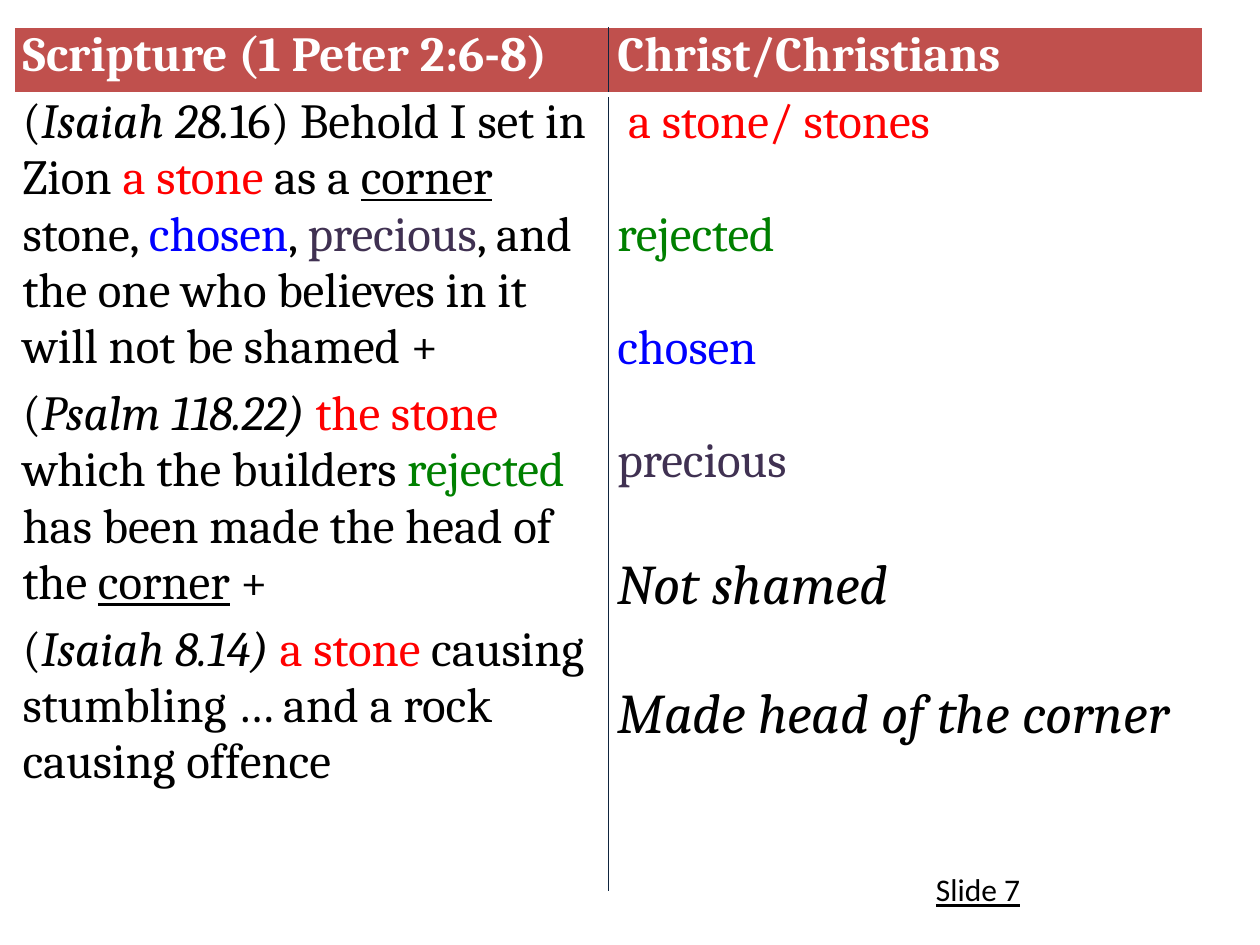
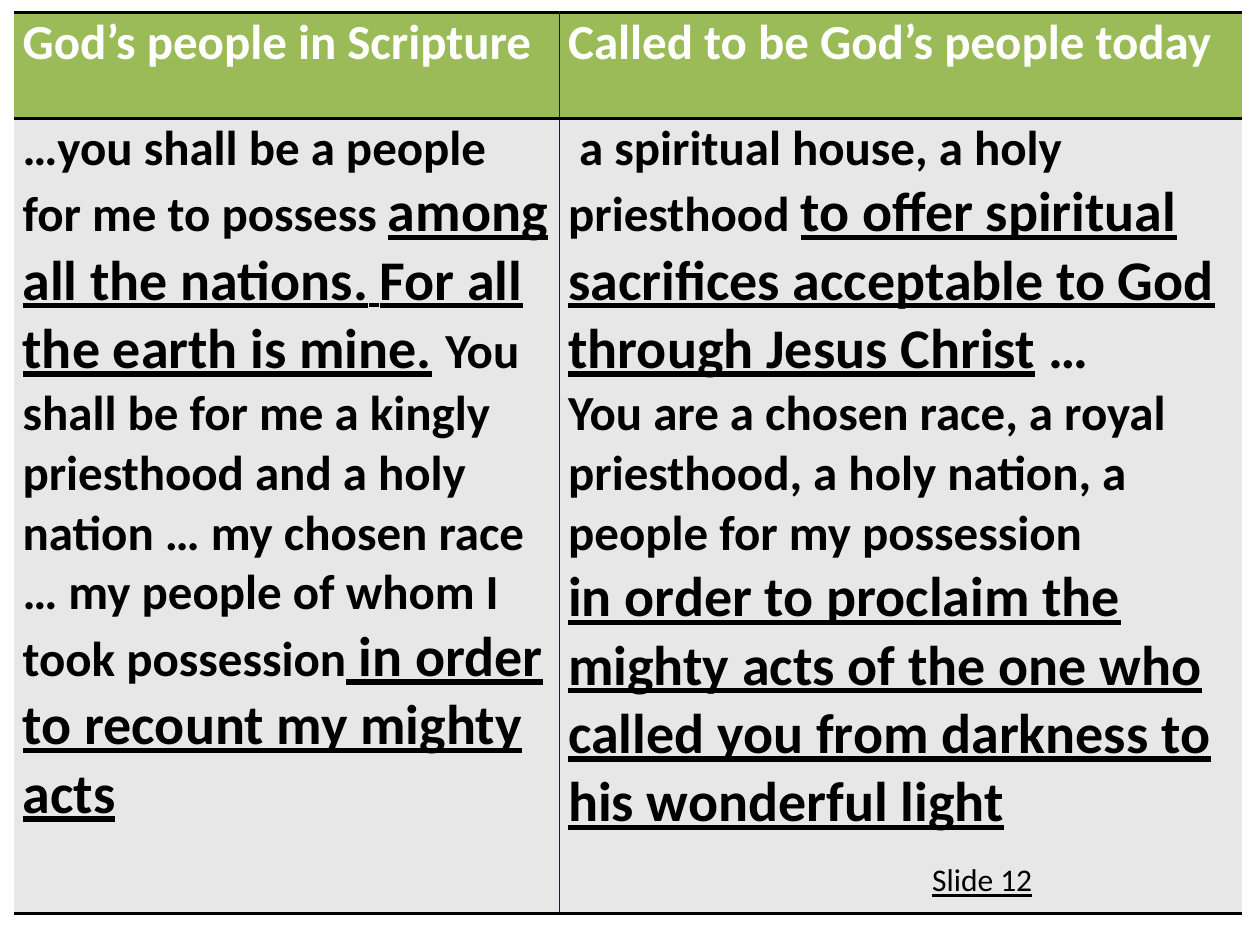
from lxml import etree
from pptx import Presentation
from pptx import util as u
from pptx.dml.color import RGBColor
from pptx.enum import text
from pptx.oxml.ns import qn

PX = 9144
WHITE, BLACK, NAVY = "FFFFFF", "000000", "0F243E"

PLAIN = {}
ITALIC = {"italic": True}
UNDERLINED = {"underline": True}
STONE = {"color": "FF0000"}
REJECTED = {"color": "008000"}
CHOSEN = {"color": "0000FF"}
PRECIOUS = {"color": "403152"}
OUTCOME = {"size": u.Pt(32), "italic": True}
MISSION = {"size": u.Pt(32), "underline": True}
LARGE = {"size": u.Pt(32)}


def rgb(value):
    return RGBColor.from_string(value)


def paragraph(*runs, before=0, after=0):
    return {"space_before": u.Pt(before), "space_after": u.Pt(after)}, runs


class Deck:
    def __init__(self):
        self.prs = Presentation()
        self.prs.slide_width = 1000 * PX
        self.prs.slide_height = 750 * PX
        self.slide = None

    def add_slide(self):
        self.slide = self.prs.slides.add_slide(self.prs.slide_layouts[6])

    def fill_text(self, frame, paragraphs, base):
        frame.word_wrap = True
        for index, (spacing, runs) in enumerate(paragraphs):
            line = frame.add_paragraph() if index else frame.paragraphs[0]
            line.alignment = text.PP_ALIGN.LEFT
            for name, value in spacing.items():
                setattr(line, name, value)
            for words, style in runs:
                run = line.add_run()
                run.text = words
                values = {"color": BLACK, "size": u.Pt(28), **base, **style}
                run.font.color.rgb = rgb(values.pop("color"))
                for name, value in values.items():
                    setattr(run.font, name, value)

    def border(self, cell, sides):
        properties = cell._tc.get_or_add_tcPr()
        for index, (side, line) in enumerate(zip("LRTB", sides)):
            edge = etree.Element(qn(f"a:ln{side}"))
            if line:
                color, width = line
                edge.set("w", str(u.Pt(width)))
                solid = etree.SubElement(edge, qn("a:solidFill"))
                etree.SubElement(solid, qn("a:srgbClr"), val=color)
            else:
                etree.SubElement(edge, qn("a:noFill"))
            properties.insert(index, edge)

    def comparison(self, left, top, widths, heights, headings, passages,
                   fills, rules, font, body):
        table = self.slide.shapes.add_table(
            2, 2, left * PX, top * PX, sum(widths) * PX, sum(heights) * PX).table
        table.first_row = table.horz_banding = False
        for column, width in zip(table.columns, widths):
            column.width = width * PX
        for row, height in zip(table.rows, heights):
            row.height = height * PX
        header = {"name": font, "bold": True, "color": WHITE}
        contents = [[[paragraph((words, PLAIN))] for words in headings], passages]
        bases = header, {"name": font, **body}
        outer, divider = rules["outer"], (NAVY, 1)
        levels = rules["levels"]
        margins = {"margin_left": 7 * PX, "margin_right": 7 * PX,
                   "margin_top": 0, "margin_bottom": 0}
        for r, row in enumerate(contents):
            for c, paragraphs in enumerate(row):
                cell = table.cell(r, c)
                for name, value in margins.items():
                    setattr(cell, name, value)
                if fills[r]:
                    cell.fill.solid()
                    cell.fill.fore_color.rgb = rgb(fills[r])
                else:
                    cell.fill.background()
                sides = (divider, outer) if c else (outer, divider)
                self.border(cell, sides + (levels[r], levels[r + 1]))
                self.fill_text(cell.text_frame, paragraphs, bases[r])

    def slide_label(self, left, top, words):
        box = self.slide.shapes.add_textbox(left * PX, top * PX, 223 * PX, 40 * PX)
        self.fill_text(box.text_frame, [paragraph((words, UNDERLINED))],
                       {"name": "Calibri", "size": u.Pt(18)})


def stone_slide(deck):
    scripture = [
        paragraph(("(", PLAIN), ("Isaiah 28.", ITALIC),
                  ("16) Behold I set in Zion ", PLAIN), ("a stone ", STONE),
                  ("as a ", PLAIN), ("corner", UNDERLINED), (" stone, ", PLAIN),
                  ("chosen", CHOSEN), (", ", PLAIN), ("precious", PRECIOUS),
                  (", and the one who believes in it will not be shamed +", PLAIN),
                  after=6),
        paragraph(("(", PLAIN), ("Psalm 118.22) ", ITALIC), ("the stone ", STONE),
                  ("which the builders ", PLAIN), ("rejected", REJECTED),
                  (" has been made the head of the ", PLAIN),
                  ("corner", UNDERLINED), (" +", PLAIN), after=6),
        paragraph(("(", PLAIN), ("Isaiah 8.14) ", ITALIC), ("a stone", STONE),
                  (" causing stumbling … and a rock causing offence", PLAIN)),
    ]
    titles = [
        (" a stone/ stones", STONE, 0),
        ("rejected", REJECTED, 32.3),
        ("chosen", CHOSEN, 32.3),
        ("precious", PRECIOUS, 32.3),
        ("Not shamed", OUTCOME, 37),
        ("Made head of the corner", OUTCOME, 37),
    ]
    christ = [paragraph((words, style), before=gap) for words, style, gap in titles]
    deck.add_slide()
    deck.comparison(
        11, 22, (472, 472), (53, 633),
        ("Scripture (1 Peter 2:6-8)", "Christ/Christians"), (scripture, christ),
        fills=("C0504D", None),
        rules={"outer": (WHITE, 1), "levels": ((WHITE, 1), (WHITE, 3), (WHITE, 1))},
        font="Cambria", body={"bold": False})
    deck.slide_label(733, 686, "Slide 7")


def people_slide(deck):
    scripture = [paragraph(
        ("…you shall be a people for me to possess ", PLAIN),
        ("among all the nations.", MISSION), (" ", UNDERLINED),
        ("For all the earth is mine.", MISSION), (" ", LARGE),
        ("You shall be for me a kingly priesthood and a holy nation … "
         "my chosen race … my people of whom I took possession", PLAIN),
        (" in order to recount my mighty acts", MISSION))]
    today = [
        paragraph((" a spiritual house, a holy priesthood ", PLAIN),
                  ("to offer spiritual sacrifices acceptable to God "
                   "through Jesus Christ", MISSION), (" …", LARGE)),
        paragraph(("You are a chosen race, a royal priesthood, a holy nation, "
                   "a people for my possession", PLAIN)),
        paragraph(("in order to proclaim the mighty acts of the one who "
                   "called you from darkness to his wonderful light", MISSION)),
    ]
    deck.add_slide()
    deck.comparison(
        11, 10, (433, 542), (84, 631),
        ("God’s people in Scripture", "Called to be God’s people today"),
        (scripture, today), fills=("9BBB59", "E7E7E7"),
        rules={"outer": None, "levels": ((BLACK, 2),) * 3},
        font="Calibri", body={"bold": True})
    deck.slide_label(730, 678, "Slide 12")


def main():
    deck = Deck()
    stone_slide(deck)
    people_slide(deck)
    deck.prs.save("out.pptx")


if __name__ == "__main__":
    main()
